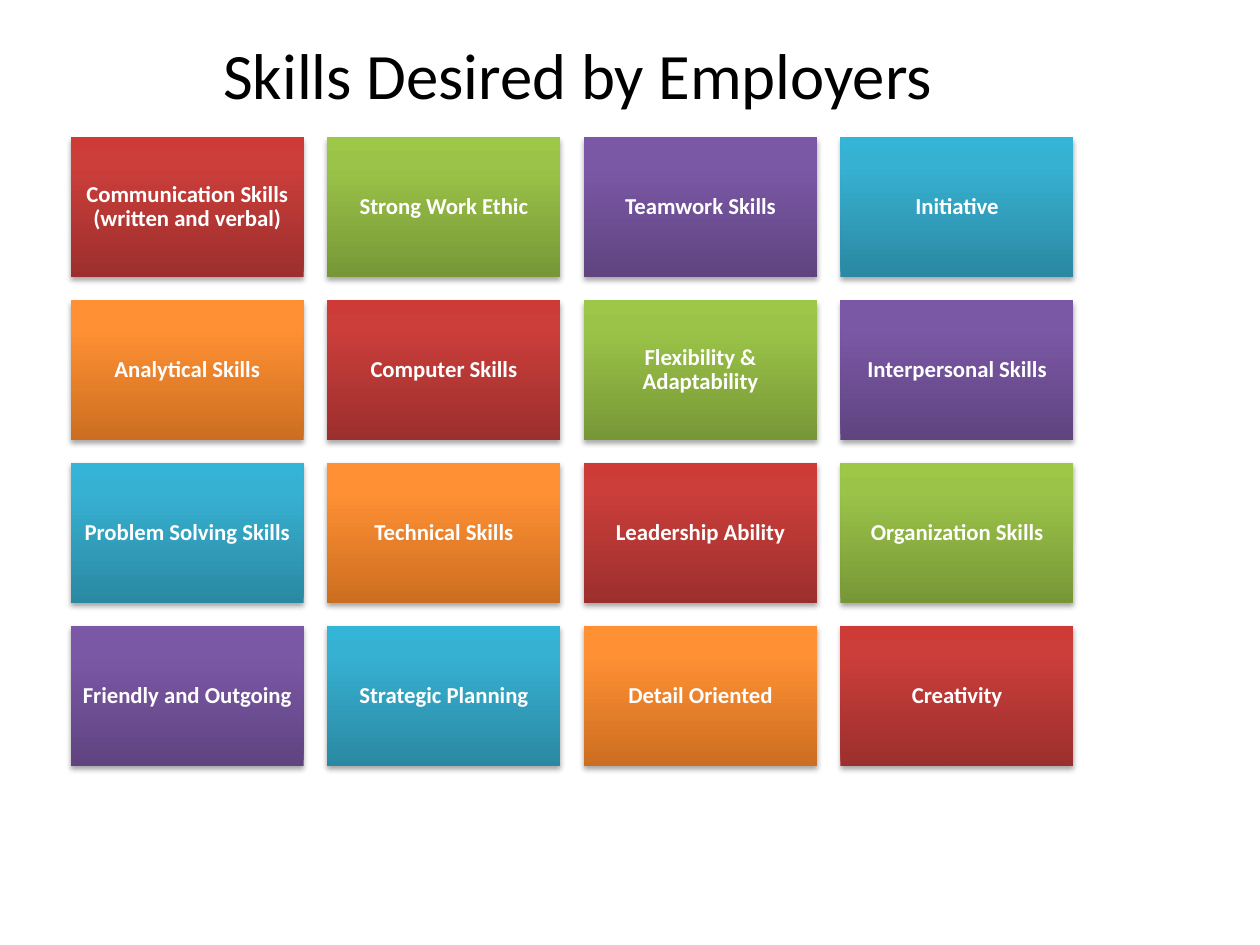
from lxml import etree
from pptx import Presentation
from pptx.dml.color import RGBColor
from pptx.enum.shapes import MSO_SHAPE
from pptx.enum.text import MSO_ANCHOR, PP_ALIGN
from pptx.oxml import parse_xml
from pptx.oxml.ns import nsdecls, qn
from pptx.util import Inches, Pt

FONT = "Calibri"
COLORS = {"title": "000000", "label": "FFFFFF", "shadow": "000000"}
# Gradient from the bottom edge to the top edge, in the order the tiles cycle
TILE_COLORS = {
    "red": ("9C2F2D", "CB3E3A", "CE3B37"),
    "green": ("779737", "9BC348", "9DC746"),
    "purple": ("5F4480", "7B58A6", "7C57A8"),
    "blue": ("2A88A2", "37B1D2", "34B4D6"),
    "orange": ("CC6E20", "FF9034", "FF9136"),
}
STOPS = (0, 80, 100)
COLUMNS = 4
SKILLS = [
    "Communication Skills (written and verbal)", "Strong Work Ethic",
    "Teamwork Skills", "Initiative",
    "Analytical Skills", "Computer Skills",
    "Flexibility & Adaptability", "Interpersonal Skills",
    "Problem Solving Skills", "Technical Skills",
    "Leadership Ability", "Organization Skills",
    "Friendly and Outgoing", "Strategic Planning",
    "Detail Oriented", "Creativity",
]


def set_text(sp, text, size, color, bold=False, margin=0.05, line_spacing=1.0):
    tf = sp.text_frame
    tf.word_wrap = True
    tf.vertical_anchor = MSO_ANCHOR.MIDDLE
    tf.margin_left = tf.margin_right = Inches(margin)
    tf.margin_top = tf.margin_bottom = Inches(0.05)
    p = tf.paragraphs[0]
    p.alignment = PP_ALIGN.CENTER
    p.line_spacing = line_spacing
    r = p.add_run()
    r.text = text
    r.font.name = FONT
    r.font.size = Pt(size)
    r.font.bold = bold
    r.font.color.rgb = RGBColor.from_string(color)


def set_gradient(sp, colors):
    sp.fill.gradient()
    sp.fill.gradient_angle = 90
    stops = sp.fill._fill._gradFill.find(qn("a:gsLst"))
    for gs in list(stops):
        stops.remove(gs)
    for pos, color in zip(STOPS, colors):
        gs = etree.SubElement(stops, qn("a:gs"), pos=str(pos * 1000))
        etree.SubElement(gs, qn("a:srgbClr"), val=color)


def set_shadow(sp):
    effects = parse_xml(
        f'<a:effectLst {nsdecls("a")}>'
        f'<a:outerShdw blurRad="{Pt(3.1)}" dist="{Pt(1.8)}" dir="5400000" rotWithShape="0">'
        f'<a:srgbClr val="{COLORS["shadow"]}"><a:alpha val="35000"/></a:srgbClr>'
        '</a:outerShdw></a:effectLst>')
    sp.shadow.inherit = False
    props = sp._element.spPr
    props.replace(props.find(qn("a:effectLst")), effects)


def add_title(s, left, top, width, height):
    sp = s.shapes.add_textbox(Inches(left), Inches(top), Inches(width), Inches(height))
    set_text(sp, "Skills Desired by Employers", 37, COLORS["title"], margin=0.1)


def add_tile(s, text, colors, left, top, width, height):
    sp = s.shapes.add_shape(MSO_SHAPE.RECTANGLE, Inches(left), Inches(top),
                            Inches(width), Inches(height))
    sp.line.fill.background()
    set_gradient(sp, colors)
    set_shadow(sp)
    set_text(sp, text, 13, COLORS["label"], bold=True, line_spacing=0.9)


def add_skill_grid(s, left, top, width, height, tile_w=1.85, tile_h=1.11):
    rows = len(SKILLS) // COLUMNS
    step_x = (width - tile_w) / (COLUMNS - 1)
    step_y = (height - tile_h) / (rows - 1)
    palette = list(TILE_COLORS.values())
    for i, skill in enumerate(SKILLS):
        row, col = divmod(i, COLUMNS)
        add_tile(s, skill, palette[i % len(palette)],
                 left + col * step_x, top + row * step_y, tile_w, tile_h)


def main():
    prs = Presentation()
    prs.slide_width, prs.slide_height = Inches(10), Inches(7.5)
    s = prs.slides.add_slide(prs.slide_layouts[6])
    add_title(s, 0.17, 0.17, 8.83, 0.83)
    add_skill_grid(s, 0.56, 1.09, 7.96, 4.99)
    prs.save("out.pptx")


if __name__ == "__main__":
    main()
